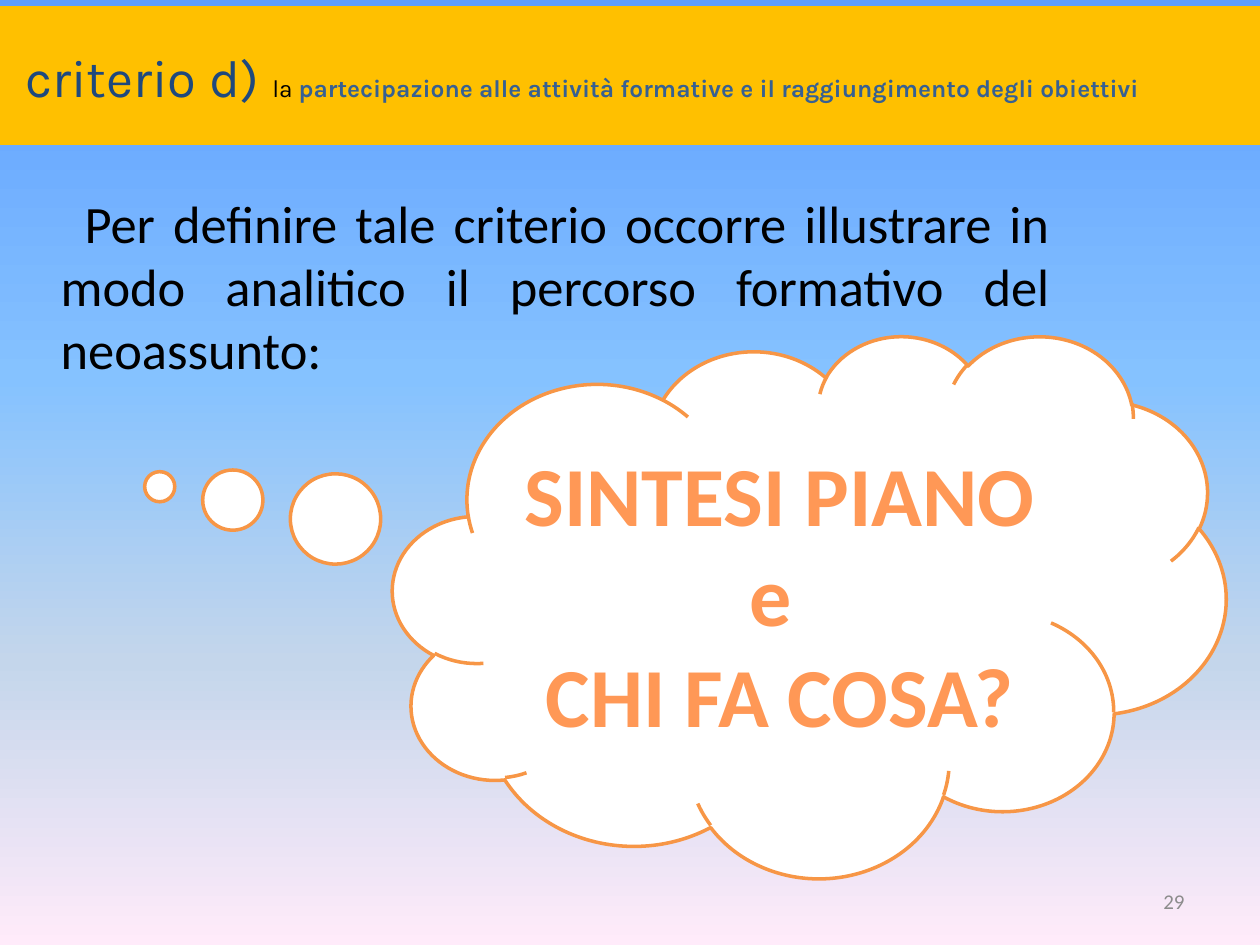
from lxml import etree
from pptx import Presentation, util as u
from pptx.dml.color import RGBColor
from pptx.enum import shapes, text
from pptx.oxml.ns import qn

EMU_PER_PX = u.Inches(1) / 126
BACKGROUND_STOPS = [(0, "5E9EFF"), (40, "85C2FF"), (70, "C4D6EB"), (100, "FFEBFA")]


def px(length):
    return u.Emu(round(length * EMU_PER_PX))


def colour(value):
    return RGBColor.from_string(value)


def place(shape, left, top, width, height):
    shape.left, shape.top = px(left), px(top)
    shape.width, shape.height = px(width), px(height)


def set_frame(shape, anchor):
    frame = shape.text_frame
    frame.word_wrap = True
    frame.auto_size = text.MSO_AUTO_SIZE.NONE
    frame.vertical_anchor = anchor
    return frame


def add_text(paragraph, words, size, color, font="Calibri", bold=False, align=None):
    """Append one formatted run to the paragraph."""
    if align is not None:
        paragraph.alignment = align
    run = paragraph.add_run()
    run.text = words
    run.font.name = font
    run.font.size = u.Pt(size)
    run.font.bold = bold
    run.font.color.rgb = colour(color)


def fill_background(slide, stops):
    fill = slide.background.fill
    fill.gradient()
    fill.gradient_angle = 270
    stop_list = slide.element.find(".//" + qn("a:gsLst"))
    for stop in list(stop_list):
        stop_list.remove(stop)
    for position, value in stops:
        stop = etree.SubElement(stop_list, qn("a:gs"), pos=str(position * 1000))
        etree.SubElement(stop, qn("a:srgbClr"), val=value)


def fill_title(title):
    place(title, 0, 6, 1260, 139)
    title.fill.solid()
    title.fill.fore_color.rgb = colour("FFC000")
    paragraph = set_frame(title, text.MSO_ANCHOR.MIDDLE).paragraphs[0]
    paragraph.alignment = text.PP_ALIGN.LEFT
    for words, size, color, bold in [
        (" criterio d)", 30, "1F497D", False),
        (" ", 32, "000000", False),
        ("la ", 14, "000000", False),
        ("partecipazione alle attività formative e il raggiungimento degli obiettivi",
         14, "376092", True),
        (" ", 30, "1F497D", False),
    ]:
        add_text(paragraph, words, size, color, font="Karla", bold=bold)


def fill_body(body):
    place(body, 0, 185, 1063, 649)
    paragraph = set_frame(body, text.MSO_ANCHOR.TOP).paragraphs[0]
    properties = paragraph._p.get_or_add_pPr()
    properties.set("marL", str(px(48)))
    properties.set("indent", str(px(24)))
    etree.SubElement(properties, qn("a:buNone"))
    add_text(paragraph,
             "Per definire tale criterio occorre illustrare in modo analitico "
             "il percorso formativo del neoassunto:",
             30, "000000", align=text.PP_ALIGN.JUSTIFY)


def add_page_number(slide, number):
    box = slide.shapes.add_textbox(px(903), px(876), px(294), px(50))
    frame = set_frame(box, text.MSO_ANCHOR.MIDDLE)
    add_text(frame.paragraphs[0], number, 12, "8C8C8C", align=text.PP_ALIGN.RIGHT)


def add_cloud(slide, lines):
    cloud = slide.shapes.add_shape(shapes.MSO_SHAPE.CLOUD_CALLOUT,
                                   px(393), px(335), px(833), px(542))
    cloud.adjustments[0], cloud.adjustments[1] = -0.78, -0.22
    cloud.shadow.inherit = False
    cloud.fill.solid()
    cloud.fill.fore_color.rgb = colour("FFFFFF")
    cloud.line.color.rgb = colour("F79646")
    cloud.line.width = u.Pt(2)
    frame = set_frame(cloud, text.MSO_ANCHOR.MIDDLE)
    for index, line in enumerate(lines):
        paragraph = frame.add_paragraph() if index else frame.paragraphs[0]
        add_text(paragraph, line, 48, "FF9856", bold=True, align=text.PP_ALIGN.CENTER)


def main():
    presentation = Presentation()
    presentation.slide_width, presentation.slide_height = px(1260), px(945)
    slide = presentation.slides.add_slide(presentation.slide_layouts[1])
    fill_background(slide, BACKGROUND_STOPS)
    fill_title(slide.shapes.title)
    fill_body(slide.placeholders[1])
    add_page_number(slide, "29")
    add_cloud(slide, ["SINTESI PIANO e ", "CHI FA COSA?"])
    presentation.save("out.pptx")


if __name__ == "__main__":
    main()
